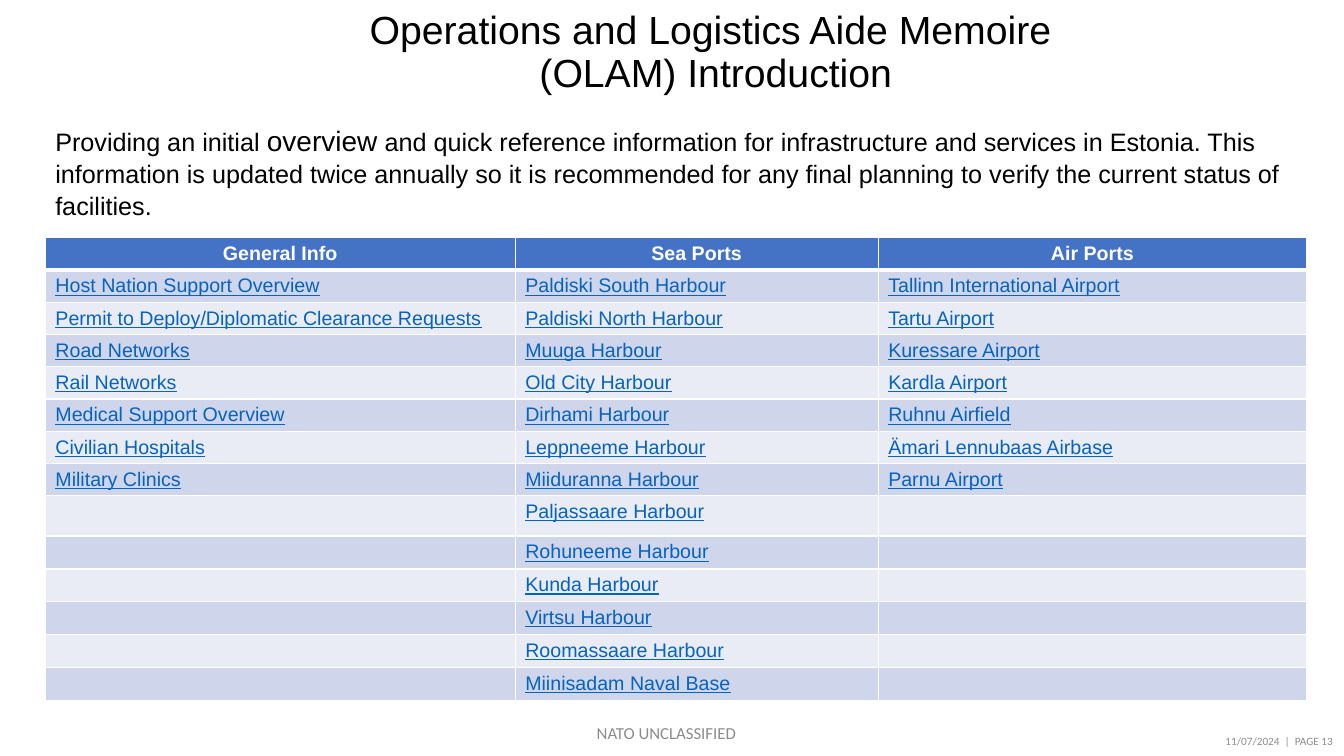
"""Build the Operations and Logistics Aide Memoire introduction slide."""
from lxml import etree
from pptx import Presentation
from pptx.dml.color import RGBColor
from pptx.enum.text import MSO_ANCHOR, MSO_AUTO_SIZE, PP_ALIGN
from pptx.oxml.ns import qn
from pptx.util import Inches, Pt

CENTER, LEFT, RIGHT = PP_ALIGN.CENTER, PP_ALIGN.LEFT, PP_ALIGN.RIGHT
TOP, MIDDLE = MSO_ANCHOR.TOP, MSO_ANCHOR.MIDDLE
NO_AUTOFIT = MSO_AUTO_SIZE.NONE
BLACK = RGBColor(0x00, 0x00, 0x00)
WHITE = RGBColor(0xFF, 0xFF, 0xFF)
GREY = RGBColor(0x8C, 0x8C, 0x8C)
HEADER_BLUE = RGBColor(0x44, 0x72, 0xC4)
LINK_BLUE = RGBColor(0x05, 0x63, 0xC1)
BANDS = [RGBColor(0xE9, 0xEB, 0xF5), RGBColor(0xCF, 0xD5, 0xEA)]

HEADINGS = ["General Info", "Sea Ports", "Air Ports"]
GENERAL_INFO = [
    "Host Nation Support Overview",
    "Permit to Deploy/Diplomatic Clearance Requests",
    "Road Networks",
    "Rail Networks",
    "Medical Support Overview",
    "Civilian Hospitals",
    "Military Clinics",
]
SEA_PORTS = [
    "Paldiski South Harbour",
    "Paldiski North Harbour",
    "Muuga Harbour",
    "Old City Harbour",
    "Dirhami Harbour",
    "Leppneeme Harbour",
    "Miiduranna Harbour",
    "Paljassaare Harbour",
    "Rohuneeme Harbour",
    "Kunda Harbour",
    "Virtsu Harbour",
    "Roomassaare Harbour",
    "Miinisadam Naval Base",
]
AIR_PORTS = [
    "Tallinn International Airport",
    "Tartu Airport",
    "Kuressare Airport",
    "Kardla Airport",
    "Ruhnu Airfield",
    "Ämari Lennubaas Airbase",
    "Parnu Airport",
]
COLUMN_WIDTHS = [4.66, 3.6, 4.25]
ROW_HEIGHT, TALL_ROW_HEIGHT = 0.32, 0.4
TALL_ROW = 8


def add_span(para, text, size, color, font="Arial"):
    span = para.add_run()
    span.text = text
    span.font.size = Pt(size)
    span.font.name = font
    span.font.color.rgb = color
    return span


def add_border(cell, side, width):
    line = etree.SubElement(cell._tc.get_or_add_tcPr(), qn(f"a:ln{side}"), w=str(Pt(width)))
    fill = etree.SubElement(line, qn("a:solidFill"))
    etree.SubElement(fill, qn("a:srgbClr"), val=str(WHITE))


deck = Presentation()
deck.slide_width, deck.slide_height = Inches(13.33), Inches(7.5)
page = deck.slides.add_slide(deck.slide_layouts[5])

title = page.shapes.title
title.left, title.top = Inches(2), Inches(0)
title.width, title.height = Inches(10.09), Inches(1.06)
title.text_frame.auto_size = NO_AUTOFIT
title.text_frame.vertical_anchor = MIDDLE
para = title.text_frame.paragraphs[0]
para.alignment = CENTER
para.line_spacing = 0.9
add_span(para, "Operations and Logistics Aide Memoire", 28, BLACK)
para.add_line_break()
add_span(para, " (OLAM) Introduction", 28, BLACK)

row_count = len(SEA_PORTS) + 1
table = page.shapes.add_table(
    row_count, len(HEADINGS), Inches(0.45), Inches(2.36), Inches(sum(COLUMN_WIDTHS)),
    Inches(ROW_HEIGHT * (row_count - 1) + TALL_ROW_HEIGHT)).table
for column, width in zip(table.columns, COLUMN_WIDTHS):
    column.width = Inches(width)
for index, row in enumerate(table.rows):
    row.height = Inches(TALL_ROW_HEIGHT if index == TALL_ROW else ROW_HEIGHT)

for column_index, entries in enumerate([GENERAL_INFO, SEA_PORTS, AIR_PORTS]):
    for row_index in range(row_count):
        is_header = row_index == 0
        cell = table.cell(row_index, column_index)
        cell.margin_top, cell.margin_bottom = Inches(0.05), Inches(0.04)
        for side in "LRTB":
            under_header = (row_index, side) in [(0, "B"), (1, "T")]
            add_border(cell, side, 3 if under_header else 1)
        cell.fill.solid()
        cell.fill.fore_color.rgb = HEADER_BLUE if is_header else BANDS[row_index % 2]
        para = cell.text_frame.paragraphs[0]
        if is_header:
            para.alignment = CENTER
            span = add_span(para, HEADINGS[column_index], 14, WHITE)
            span.font.bold = True
        elif row_index <= len(entries):
            span = add_span(para, entries[row_index - 1], 14, LINK_BLUE)
            span.font.bold = False
            span.font.underline = True
        else:
            etree.SubElement(para._p, qn("a:endParaRPr"), sz="1400")

OVERVIEW = [
    ("Providing an initial ", 18, BLACK),
    ("overview", 20, BLACK),
    (" and quick reference information for infrastructure and services in Estonia. "
     "This information is updated twice annually so it is recommended for any final "
     "planning to verify the current status of facilities.", 18, BLACK),
]
TEXT_BOXES = [
    ((11.94, 7.2, 1.38, 0.3), RIGHT, MIDDLE, 1,
     [("11/07/2024  |  PAGE 13", 8, GREY, "Calibri")]),
    ((0.45, 1.16, 12.54, 1.08), LEFT, TOP, 1.05, OVERVIEW),
    ((4.36, 7.07, 4.5, 0.4), CENTER, MIDDLE, 1,
     [("NATO UNCLASSIFIED", 12, GREY, "Calibri")]),
]
for place, alignment, anchor, spacing, spans in TEXT_BOXES:
    box = page.shapes.add_textbox(*map(Inches, place))
    box.text_frame.word_wrap = True
    box.text_frame.vertical_anchor = anchor
    para = box.text_frame.paragraphs[0]
    para.alignment = alignment
    para.line_spacing = spacing
    for span in spans:
        add_span(para, *span)

deck.save("out.pptx")
